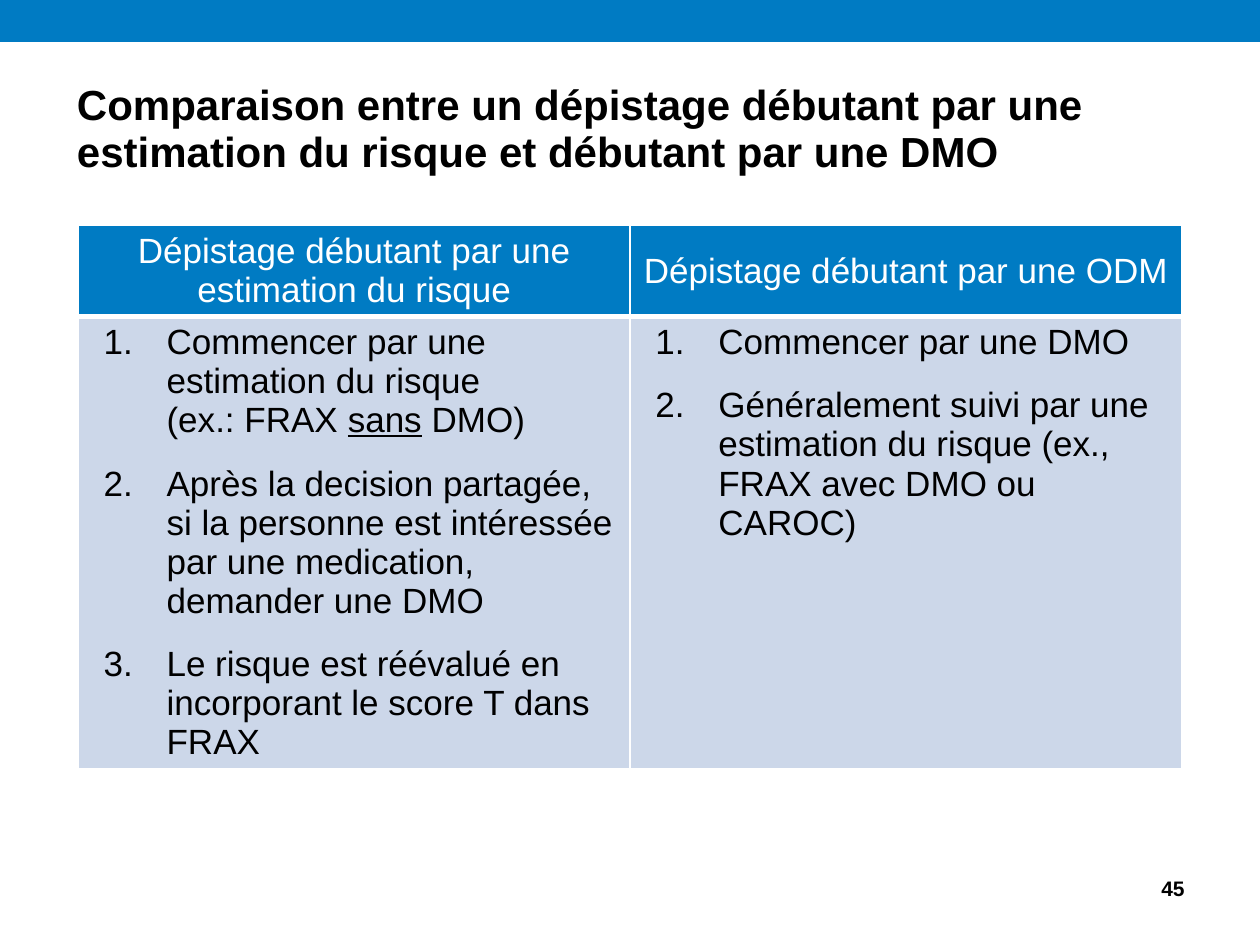
from dataclasses import dataclass

from lxml.etree import SubElement
from pptx import Presentation
from pptx.dml.color import RGBColor
from pptx.enum.shapes import MSO_SHAPE
from pptx.enum.text import MSO_ANCHOR, MSO_AUTO_SIZE, PP_ALIGN
from pptx.oxml.ns import qn
from pptx.util import Pt


@dataclass(frozen=True)
class Theme:
    font: str = "Arial"
    blue: str = "007BC3"
    pale: str = "CCD7E9"
    white: str = "FFFFFF"
    black: str = "000000"
    title_size: float = 24
    table_size: float = 20
    number_size: float = 12
    title_leading: float = 26.8
    table_leading: float = 22.3
    item_gap: float = 14


TITLE = ("Comparaison entre un dépistage débutant par une estimation du risque "
         "et débutant par une DMO")
HEADERS = ["Dépistage débutant par une estimation du risque",
           "Dépistage débutant par une ODM"]
# Each step is a list of (text, underlined) runs; "\n" stands for a line break.
STEPS = [
    [
        [("Commencer par une estimation du risque", False), ("\n", False),
         ("(ex.: FRAX\u00a0", False), ("sans", True), ("\u00a0DMO)", False)],
        [("Après la decision partagée, si la personne est intéressée par une "
          "medication, demander une DMO", False)],
        [("Le risque est réévalué en incorporant le score T dans FRAX", False)],
    ],
    [
        [("Commencer par une DMO", False)],
        [("Généralement suivi par une estimation du risque (ex., FRAX avec DMO "
          "ou CAROC)", False)],
    ],
]


class SlideBuilder:
    def __init__(self, slide, theme):
        self.slide = slide
        self.theme = theme

    def add_run(self, paragraph, text, size, color, bold=False, underline=False):
        run = paragraph.add_run()
        run.text = text
        font = run.font
        font.name, font.size = self.theme.font, Pt(size)
        font.bold, font.underline = bold, underline
        font.color.rgb = RGBColor.from_string(color)

    def add_bar(self, left, top, width, height):
        shape = self.slide.shapes.add_shape(
            MSO_SHAPE.RECTANGLE, Pt(left), Pt(top), Pt(width), Pt(height))
        shape.shadow.inherit = False
        shape.fill.solid()
        shape.fill.fore_color.rgb = RGBColor.from_string(self.theme.blue)
        shape.line.fill.background()

    def add_title(self, text, left, top, width, height):
        title = self.slide.shapes.title
        title.left, title.top = Pt(left), Pt(top)
        title.width, title.height = Pt(width), Pt(height)
        frame = title.text_frame
        frame.margin_left = frame.margin_right = Pt(0)
        frame.margin_top = frame.margin_bottom = Pt(0)
        frame.word_wrap = True
        frame.auto_size = MSO_AUTO_SIZE.SHAPE_TO_FIT_TEXT
        frame.vertical_anchor = MSO_ANCHOR.TOP
        paragraph = frame.paragraphs[0]
        paragraph.alignment = PP_ALIGN.LEFT
        paragraph.line_spacing = Pt(self.theme.title_leading)
        self.add_run(paragraph, text, self.theme.title_size, self.theme.black, bold=True)

    def add_page_number(self, text, left, top, width, height):
        box = self.slide.shapes.add_textbox(Pt(left), Pt(top), Pt(width), Pt(height))
        frame = box.text_frame
        frame.word_wrap = True
        frame.vertical_anchor = MSO_ANCHOR.MIDDLE
        paragraph = frame.paragraphs[0]
        paragraph.alignment = PP_ALIGN.RIGHT
        self.add_run(paragraph, text, self.theme.number_size, self.theme.black, bold=True)

    def style_cell(self, cell, color, bottom_width=1):
        properties = cell._tc.get_or_add_tcPr()
        for side, width in (("L", 1), ("R", 1), ("T", 1), ("B", bottom_width)):
            line = SubElement(properties, qn(f"a:ln{side}"), w=str(Pt(width)))
            fill = SubElement(line, qn("a:solidFill"))
            SubElement(fill, qn("a:srgbClr"), val=self.theme.white)
        cell.fill.solid()
        cell.fill.fore_color.rgb = RGBColor.from_string(color)

    def number_paragraph(self, paragraph):
        """Give the paragraph a hanging indent and an automatic number."""
        paragraph.level = 1
        properties = paragraph._p.get_or_add_pPr()
        properties.set("marL", str(Pt(43.2)))
        properties.set("indent", str(Pt(-36)))
        color = SubElement(properties, qn("a:buClr"))
        SubElement(color, qn("a:srgbClr"), val=self.theme.black)
        SubElement(properties, qn("a:buFont"), typeface=self.theme.font)
        SubElement(properties, qn("a:buAutoNum"), type="arabicPeriod")

    def fill_header(self, cell, text):
        self.style_cell(cell, self.theme.blue, bottom_width=3)
        cell.vertical_anchor = MSO_ANCHOR.MIDDLE
        paragraph = cell.text_frame.paragraphs[0]
        paragraph.alignment = PP_ALIGN.CENTER
        paragraph.line_spacing = Pt(self.theme.table_leading)
        self.add_run(paragraph, text, self.theme.table_size, self.theme.white)

    def fill_steps(self, cell, steps):
        self.style_cell(cell, self.theme.pale)
        cell.vertical_anchor = MSO_ANCHOR.TOP
        frame = cell.text_frame
        for index, runs in enumerate(steps):
            paragraph = frame.add_paragraph() if index else frame.paragraphs[0]
            self.number_paragraph(paragraph)
            paragraph.line_spacing = Pt(self.theme.table_leading)
            if index:
                paragraph.space_before = Pt(self.theme.item_gap)
            for text, underline in runs:
                if text == "\n":
                    paragraph.add_line_break()
                else:
                    self.add_run(paragraph, text, self.theme.table_size,
                                 self.theme.black, underline=underline)

    def add_comparison(self, headers, steps, left, top, width, row_heights):
        table = self.slide.shapes.add_table(
            len(row_heights), len(headers), Pt(left), Pt(top), Pt(width),
            Pt(sum(row_heights))).table
        for row, height in zip(table.rows, row_heights):
            row.height = Pt(height)
        for column, (header, column_steps) in enumerate(zip(headers, steps)):
            table.columns[column].width = Pt(width / len(headers))
            self.fill_header(table.cell(0, column), header)
            self.fill_steps(table.cell(1, column), column_steps)


def main():
    presentation = Presentation()
    presentation.slide_width, presentation.slide_height = Pt(720), Pt(540)
    slide = presentation.slides.add_slide(presentation.slide_layouts[5])
    builder = SlideBuilder(slide, Theme())
    builder.add_bar(0, 0, 720, 24)
    builder.add_page_number("45", 516, 493.2, 168, 28.8)
    builder.add_comparison(HEADERS, STEPS, 44.8, 128.8, 630.6, [52, 258])
    builder.add_title(TITLE, 44, 46.8, 631.4, 54.7)
    presentation.save("out.pptx")


if __name__ == "__main__":
    main()
